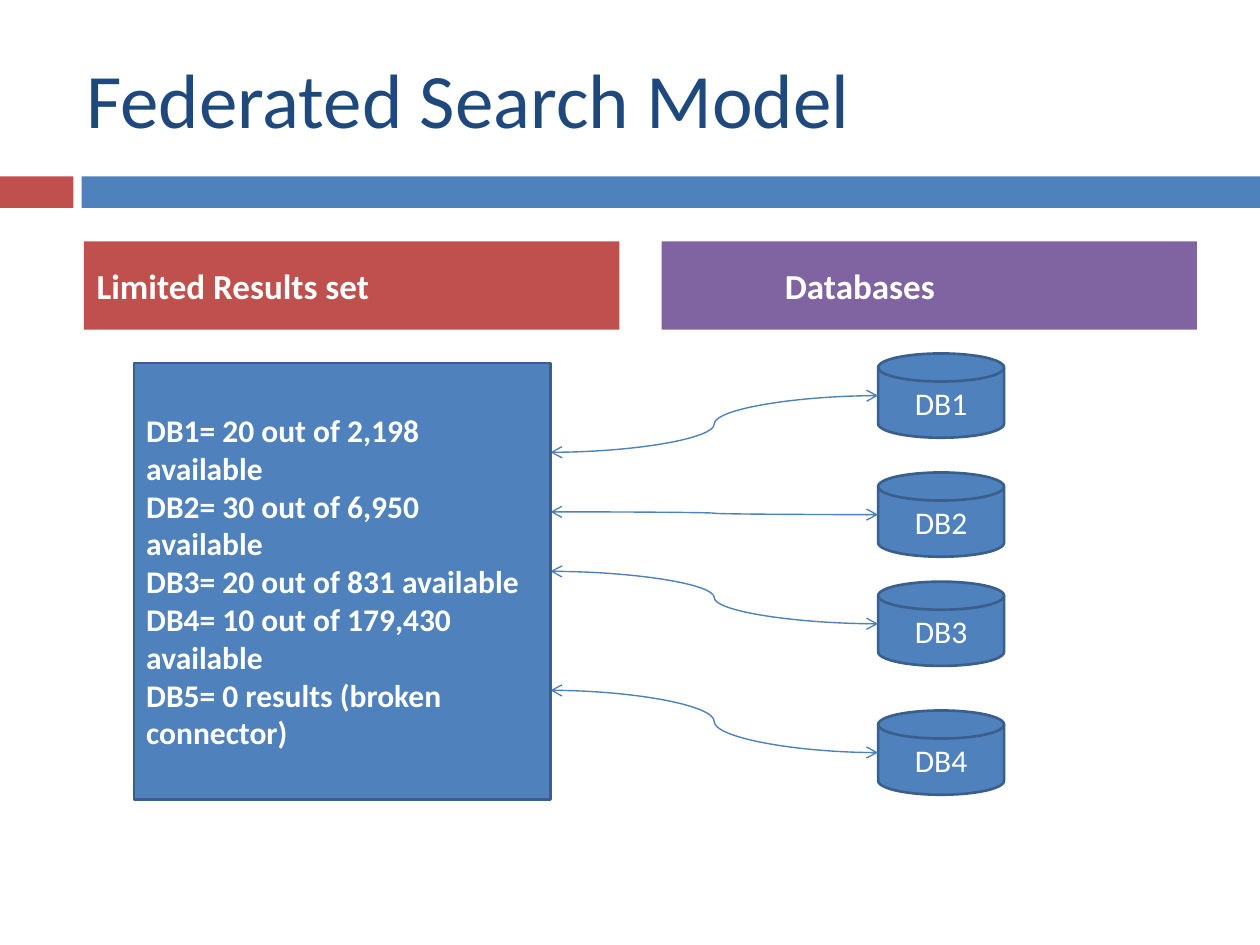
"""Build the Federated Search Model slide."""
from lxml import etree
from pptx import Presentation
from pptx.dml import color
from pptx.enum import shapes, text
from pptx.oxml import ns
from pptx.util import Pt

BLUE, RED, PURPLE = "4F81BD", "C0504D", "8064A2"
NAVY, OUTLINE, WHITE = "1F497D", "3A5F8C", "FFFFFF"
LEFT, CENTER = text.PP_ALIGN.LEFT, text.PP_ALIGN.CENTER


def rgb(value):
    return color.RGBColor.from_string(value)


class SlideBuilder:
    font = "Calibri"

    def __init__(self, slide):
        self.slide = slide

    def label(self, shape, content, size, ink=WHITE, bold=False, align=LEFT, before=0):
        frame = shape.text_frame
        frame.text = content
        frame.word_wrap = True
        frame.auto_size = text.MSO_AUTO_SIZE.NONE
        frame.vertical_anchor = text.MSO_ANCHOR.MIDDLE
        for paragraph in frame.paragraphs:
            paragraph.alignment = align
            paragraph.space_before = Pt(before)
            for run in paragraph.runs:
                run.font.name = self.font
                run.font.size = Pt(size)
                run.font.bold = bold
                run.font.color.rgb = rgb(ink)

    def placeholder(self, index, box, content, size, fill=None, **style):
        shape = self.slide.placeholders[index]
        shape.left, shape.top, shape.width, shape.height = map(Pt, box)
        if fill:
            shape.fill.solid()
            shape.fill.fore_color.rgb = rgb(fill)
        self.label(shape, content, size, **style)
        return shape

    def remove_placeholder(self, index):
        element = self.slide.placeholders[index].element
        element.getparent().remove(element)

    def block(self, kind, box, fill, line=None):
        shape = self.slide.shapes.add_shape(kind, *map(Pt, box))
        shape.shadow.inherit = False
        shape.fill.solid()
        shape.fill.fore_color.rgb = rgb(fill)
        if line:
            shape.line.color.rgb = rgb(line)
            shape.line.width = Pt(1.5)
        else:
            shape.line.fill.background()
        return shape

    def curve(self, start, end):
        connector = self.slide.shapes.add_connector(
            shapes.MSO_CONNECTOR.CURVE, *map(Pt, start + end))
        connector.line.color.rgb = rgb(BLUE)
        connector.line.width = Pt(0.79)
        properties = connector.element.spPr
        line = properties.find(ns.qn("a:ln"))
        for tag in ("a:headEnd", "a:tailEnd"):
            etree.SubElement(line, ns.qn(tag), type="arrow")
        etree.SubElement(properties, ns.qn("a:effectLst"))


def main():
    presentation = Presentation()
    presentation.slide_width, presentation.slide_height = Pt(720), Pt(540)
    slide = presentation.slides.add_slide(presentation.slide_layouts[4])
    builder = SlideBuilder(slide)
    rectangle = shapes.MSO_SHAPE.RECTANGLE

    builder.block(rectangle, (0, 100.8, 42, 18), RED)
    builder.block(rectangle, (46.6, 100.8, 673.4, 18), BLUE)

    builder.placeholder(0, (42, 21.6, 642, 68.4), "Federated Search Model", 44, ink=NAVY)
    headings = ((1, 48, "Limited Results set", RED), (3, 378, "Databases", PURPLE))
    for index, left, content, fill in headings:
        heading = builder.placeholder(index, (left, 138, 306, 50.4), content, 20,
                                      fill=fill, bold=True, before=7)
    heading.text_frame.margin_left = Pt(70.5)
    for index in (2, 4):
        builder.remove_placeholder(index)

    results_left, results_width = 76.5, 238
    results_right = results_left + results_width
    disk_left, disk_width, disk_height = 501.8, 72, 48.2
    databases = (("DB1", 202, 0), ("DB2", 270, 1), ("DB3", 332.4, 2), ("DB4", 406, 4))
    for name, top, step in databases:
        disk = builder.block(shapes.MSO_SHAPE.FLOWCHART_MAGNETIC_DISK,
                             (disk_left, top, disk_width, disk_height), BLUE, OUTLINE)
        builder.label(disk, name, 18, align=CENTER)
        builder.curve((results_right, 258.5 + 34 * step),
                      (disk_left, top + disk_height / 2))

    results = builder.block(rectangle, (results_left, 207.4, results_width, 249.4),
                            BLUE, OUTLINE)
    builder.label(results, "\n".join((
        "DB1= 20 out of 2,198 available",
        "DB2= 30 out of 6,950 available",
        "DB3= 20 out of 831 available",
        "DB4= 10 out of 179,430 available",
        "DB5= 0 results (broken connector)",
    )), 18, bold=True)

    presentation.save("out.pptx")


if __name__ == "__main__":
    main()
